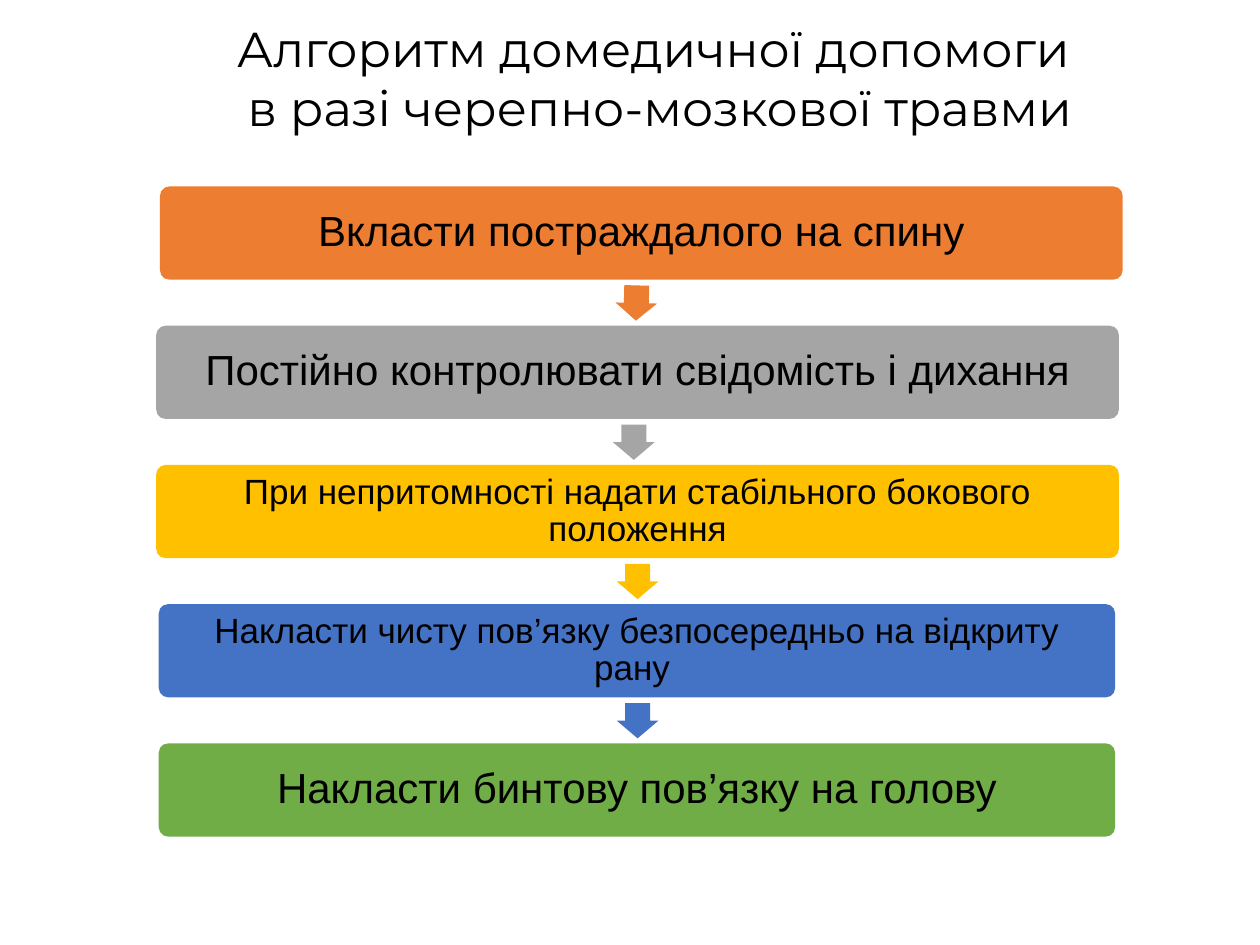
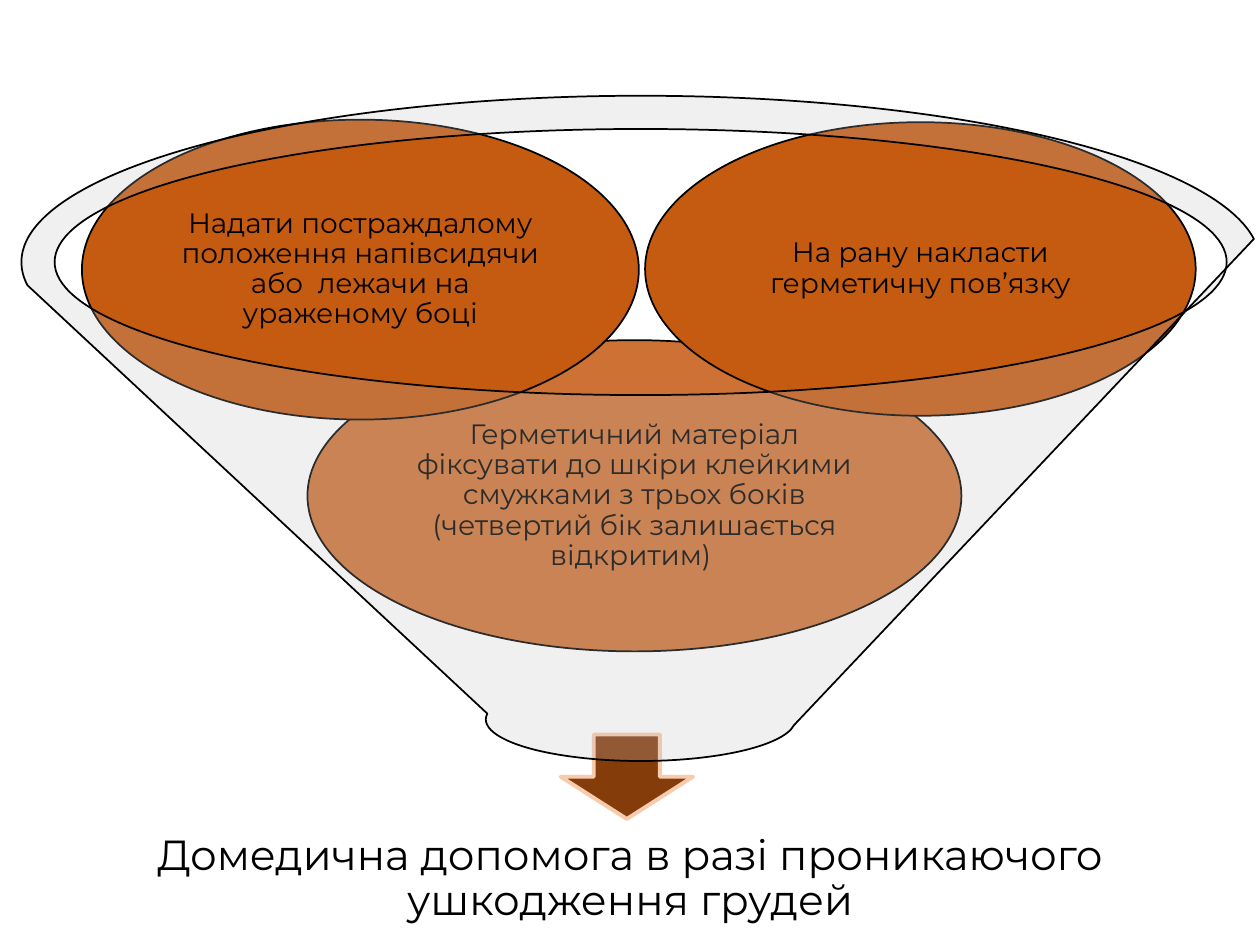
from collections import namedtuple

from lxml import etree
from pptx import Presentation
from pptx import util as u
from pptx.dml.color import RGBColor
from pptx.enum import shapes, text
from pptx.oxml.ns import qn

# The slide is a grid of 100 columns by 75 rows
COLUMNS, ROWS = 100, 75
CELL = u.Inches(0.1)

BLACK = RGBColor(0x00, 0x00, 0x00)
ORANGE = RGBColor(0xED, 0x7D, 0x31)
GRAY = RGBColor(0xA5, 0xA5, 0xA5)
GOLD = RGBColor(0xFF, 0xC0, 0x00)
BLUE = RGBColor(0x44, 0x72, 0xC4)
GREEN = RGBColor(0x70, 0xAD, 0x47)
RUST = RGBColor(0xC5, 0x5A, 0x11)
BROWN = RGBColor(0x84, 0x3C, 0x0B)
PEACH = RGBColor(0xF8, 0xCB, 0xAD)
SILVER = RGBColor(0xBF, 0xBF, 0xBF)

TITLE_FONT, STEP_FONT = "Montserrat", "Arial"
FORM = shapes.MSO_SHAPE

Box = namedtuple("Box", "left top width height")
Step = namedtuple("Step", "label color size shift width arrow_shift turn")
Ball = namedtuple("Ball", "label box opacity")

STEPS = [
    Step("Вкласти постраждалого на спину", ORANGE, 24, 0.3, 76.4, 36.7, 91.5),
    Step("Постійно контролювати свідомість і дихання", GRAY, 24, 0, 76.4, 36.5, 90),
    Step("При непритомності надати стабільного бокового положення",
         GOLD, 20, 0, 76.4, 36.8, 90),
    Step("Накласти чисту пов’язку безпосередньо на відкриту рану ",
         BLUE, 20, 0.2, 75.9, 36.8, 90),
    Step("Накласти бинтову пов’язку на голову", GREEN, 24, 0.2, 75.9, None, None),
]

# Ball boxes are measured from the corner of the funnel
BALLS = [
    Ball("Герметичний матеріал фіксувати до шкіри клейкими смужками "
         "з трьох боків (четвертий бік залишається відкритим) ",
         Box(22.7, 19.4, 51.9, 24.7), 85),
    Ball("Надати постраждалому положення напівсидячи або  лежачи на ураженому боці",
         Box(4.8, 1.9, 44.2, 23.8), 100),
    Ball("На рану накласти герметичну пов’язку",
         Box(49.5, 2.1, 43.7, 23.3), 100),
]


def apply(target, formats):
    for name, value in formats.items():
        setattr(target, name, value)


def within(outer, box):
    """Turn a box measured from the corner of outer into slide cells."""
    return box._replace(left=outer.left + box.left, top=outer.top + box.top)


def place(box):
    return {name: round(value * CELL) for name, value in box._asdict().items()}


def write(shape, lines, font, size, inset, spacing=0.9,
          anchor=text.MSO_ANCHOR.MIDDLE, wrap=True):
    frame = shape.text_frame
    frame.text = "\n".join(lines)
    sides = ("margin_left", "margin_top", "margin_right", "margin_bottom")
    apply(frame, {side: round(inset * CELL) for side in sides})
    apply(frame, {"auto_size": text.MSO_AUTO_SIZE.NONE,
                  "vertical_anchor": anchor, "word_wrap": wrap})
    for paragraph in frame.paragraphs:
        apply(paragraph, {"alignment": text.PP_ALIGN.CENTER,
                          "line_spacing": spacing})
        for run in paragraph.runs:
            apply(run.font, {"name": font, "size": u.Pt(size)})
            run.font.color.rgb = BLACK


def add_title(slide, box, lines, size, **layout):
    title = slide.shapes.title
    apply(title, place(box))
    write(title, lines, TITLE_FONT, size, **layout)


def add_form(slide, form, box, color, opacity=100, line=None, weight=1):
    shape = slide.shapes.add_shape(form, *place(box).values())
    shape.shadow.inherit = False
    shape.fill.solid()
    shape.fill.fore_color.rgb = color
    if opacity < 100:
        fill = shape.fill._xPr.find(qn("a:solidFill"))
        etree.SubElement(fill[0], qn("a:alpha"), val=str(opacity * 1000))
    if line is None:
        shape.line.fill.background()
    else:
        shape.line.color.rgb = line
        shape.line.width = u.Pt(weight)
    return shape


def add_step_chain(slide, box):
    """Stack the steps in equal rows, with an arrow in each gap."""
    bar_height = 7.4
    pitch = (box.height - bar_height) / (len(STEPS) - 1)
    for index, step in enumerate(STEPS):
        top = index * pitch
        bar = add_form(slide, FORM.ROUNDED_RECTANGLE,
                       within(box, Box(step.shift, top, step.width, bar_height)),
                       step.color)
        bar.adjustments[0] = 0.1
        write(bar, [step.label], STEP_FONT, step.size, inset=step.size / 24)
        if step.turn:
            arrow = add_form(slide, FORM.RIGHT_ARROW,
                             within(box, Box(step.arrow_shift, top + 7.6, 2.8, 3.3)),
                             step.color)
            arrow.rotation = step.turn
            arrow.adjustments[0] = 0.6


def add_funnel(slide, box):
    """Draw the outlet arrow, the balls and the funnel over them."""
    add_form(slide, FORM.DOWN_ARROW, within(box, Box(42.8, 50.7, 10.5, 6.7)),
             BROWN, line=PEACH, weight=2.25)
    for ball in BALLS:
        ellipse = add_form(slide, FORM.OVAL, within(box, ball.box), RUST,
                           ball.opacity, BLACK)
        write(ellipse, [ball.label], TITLE_FONT, 16, inset=0.2)
    add_form(slide, FORM.FUNNEL, box, SILVER, 23, BLACK)


def build_head_injury(slide):
    add_title(slide, Box(15.3, 1, 74.1, 10.4),
              ["Алгоритм домедичної допомоги ", "в разі черепно-мозкової травми"],
              28, inset=0.5, spacing=1.0, anchor=text.MSO_ANCHOR.TOP, wrap=False)
    add_step_chain(slide, Box(12.4, 14.8, 76.7, 51.6))


def build_chest_wound(slide):
    add_title(slide, Box(0, 65.6, COLUMNS, 8.4),
              ["Домедична допомога в разі проникаючого ушкодження грудей"],
              24, inset=1.9)
    add_funnel(slide, Box(1.7, 7.6, 98.3, 52.8))


def main():
    presentation = Presentation()
    apply(presentation, {"slide_width": COLUMNS * CELL,
                         "slide_height": ROWS * CELL})
    title_only = presentation.slide_layouts[5]
    for build in (build_head_injury, build_chest_wound):
        build(presentation.slides.add_slide(title_only))
    presentation.save("out.pptx")


if __name__ == "__main__":
    main()
